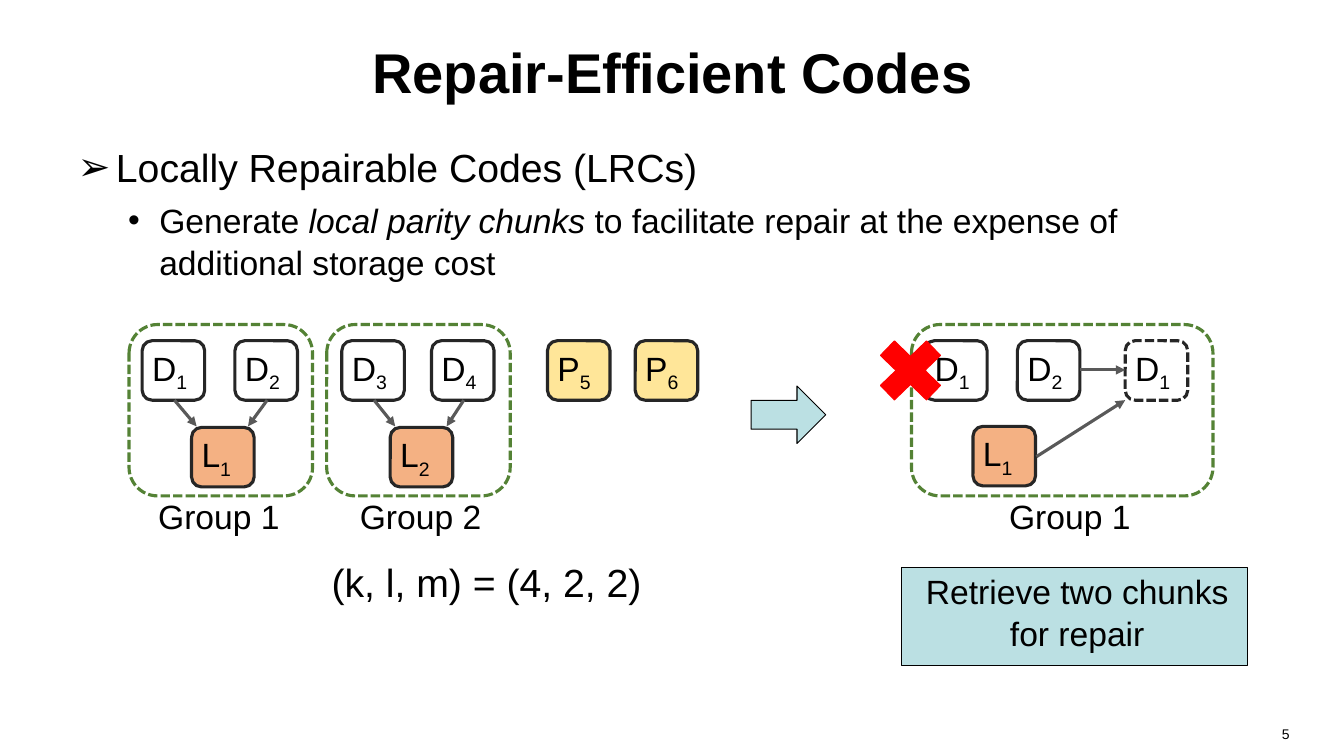
from dataclasses import dataclass

from lxml.etree import SubElement
from pptx import Presentation
from pptx.dml.color import RGBColor
from pptx.enum.dml import MSO_LINE
from pptx.enum.shapes import MSO_CONNECTOR, MSO_SHAPE
from pptx.enum.text import MSO_ANCHOR, MSO_AUTO_SIZE, PP_ALIGN
from pptx.oxml.ns import qn
from pptx.util import Emu, Pt

PX = 9144  # EMU per px, 100 px to the inch


@dataclass(frozen=True)
class Theme:
    font: str = "Arial"
    ink: str = "000000"
    outline: str = "262626"
    arrow: str = "595959"
    group: str = "548235"
    parity: str = "FFE699"
    local: str = "F4B183"
    accent: str = "BBE0E3"
    failure: str = "FF0000"
    title: int = 40
    large: int = 28
    text: int = 24
    small: int = 10
    thick: float = 2.25
    thin: float = 0.75


THEME = Theme()
CHUNK_W, CHUNK_H = 62, 59
DATA_Y, LOCAL_Y = 338, 424
GROUP_Y, GROUP_H = 322, 170


def px(*lengths):
    return [Emu(length * PX) for length in lengths]


def write(paragraph, text, size=THEME.text, bold=False, italic=False,
          align=None, baseline=0):
    """Append one formatted run to a paragraph."""
    run = paragraph.add_run()
    run.text = text
    font = run.font
    font.name, font.size = THEME.font, Pt(size)
    font.bold, font.italic = bold, italic
    font.color.rgb = RGBColor.from_string(THEME.ink)
    if baseline:
        run._r.get_or_add_rPr().set("baseline", str(baseline * 1000))
    if align is not None:
        paragraph.alignment = align


def set_frame(frame, margins=(10, 5, 10, 5), anchor=MSO_ANCHOR.TOP, wrap=True):
    frame.margin_left, frame.margin_top, frame.margin_right, frame.margin_bottom = px(*margins)
    frame.vertical_anchor = anchor
    frame.word_wrap = wrap
    frame.auto_size = MSO_AUTO_SIZE.NONE


def place(placeholder, left, top, width, height):
    placeholder.left, placeholder.top, placeholder.width, placeholder.height = px(
        left, top, width, height)


def add_block(slide, kind, box, fill=None, line=THEME.outline,
              weight=THEME.thick, dashed=False):
    block = slide.shapes.add_shape(kind, *px(*box))
    block.shadow.inherit = False
    if fill:
        block.fill.solid()
        block.fill.fore_color.rgb = RGBColor.from_string(fill)
    else:
        block.fill.background()
    block.line.color.rgb = RGBColor.from_string(line)
    block.line.width = Pt(weight)
    if dashed:
        block.line.dash_style = MSO_LINE.SQUARE_DOT
    return block


def add_chunk(slide, letter, index, left, top, fill=None, dashed=False):
    chunk = add_block(slide, MSO_SHAPE.ROUNDED_RECTANGLE,
                      (left, top, CHUNK_W, CHUNK_H), fill, dashed=dashed)
    set_frame(chunk.text_frame, margins=(7, 4, 0, 0))
    name = chunk.text_frame.paragraphs[0]
    write(name, letter, align=PP_ALIGN.LEFT)
    write(name, index, baseline=-25)


def add_label(slide, text, box, size=THEME.text, align=PP_ALIGN.LEFT, wrap=False):
    label = slide.shapes.add_textbox(*px(*box))
    set_frame(label.text_frame, wrap=wrap)
    write(label.text_frame.paragraphs[0], text, size=size, align=align)


def add_group(slide, name, left, width, label_left):
    add_block(slide, MSO_SHAPE.ROUNDED_RECTANGLE, (left, GROUP_Y, width, GROUP_H),
              line=THEME.group, dashed=True)
    add_label(slide, name, (label_left, 487, 142, 50))


def add_arrow(slide, *ends):
    arrow = slide.shapes.add_connector(MSO_CONNECTOR.STRAIGHT, *px(*ends))
    arrow.line.color.rgb = RGBColor.from_string(THEME.arrow)
    arrow.line.width = Pt(THEME.thick)
    SubElement(arrow.line._get_or_add_ln(), qn("a:tailEnd"), type="triangle")
    SubElement(arrow._element.spPr, qn("a:effectLst"))


def set_bullet(paragraph, mark, margin, hanging):
    properties = paragraph._p.get_or_add_pPr()
    properties.set("marL", str(margin * PX))
    properties.set("indent", str(-hanging * PX))
    SubElement(properties, qn("a:buFont"), typeface=THEME.font)
    SubElement(properties, qn("a:buChar"), char=mark)


def add_heading(slide):
    heading = slide.shapes.title
    place(heading, 67, 8, 1200, 125)
    set_frame(heading.text_frame, anchor=MSO_ANCHOR.MIDDLE)
    write(heading.text_frame.paragraphs[0], "Repair-Efficient Codes",
          size=THEME.title, bold=True, align=PP_ALIGN.CENTER)


def add_points(slide):
    points = slide.placeholders[1]
    place(points, 67, 142, 1200, 612)
    set_frame(points.text_frame)

    codes = points.text_frame.paragraphs[0]
    codes.line_spacing, codes.space_before = 0.9, Pt(0)
    set_bullet(codes, "➢", 38, 38)
    write(codes, "Locally Repairable Codes (LRCs)", size=THEME.large)

    parity = points.text_frame.add_paragraph()
    parity.level = 1
    parity.line_spacing, parity.space_before = 1.05, Pt(5)
    set_bullet(parity, "•", 81, 31)
    write(parity, "Generate ")
    write(parity, "local parity chunks ", italic=True)
    write(parity, "to facilitate repair at the expense of additional storage cost")


def add_encoding(slide):
    # Local groups: two data chunks feed one local parity chunk
    groups = [(1, 128, 147, (141, 233), 190), (2, 324, 347, (339, 428), 387)]
    for number, left, label_left, data_lefts, local_left in groups:
        add_group(slide, f"Group {number}", left, 182, label_left)
        for offset, data_left in enumerate(data_lefts):
            add_chunk(slide, "D", str(2 * number - 1 + offset), data_left, DATA_Y)
            tip = local_left + (5, 56)[offset]
            add_arrow(slide, data_left + 32, DATA_Y + CHUNK_H, tip, LOCAL_Y - 1)
        add_chunk(slide, "L", str(number), local_left, LOCAL_Y, THEME.local)

    # Global parity chunks
    for index, left in (("5", 543), ("6", 630)):
        add_chunk(slide, "P", index, left, DATA_Y, THEME.parity)
    add_label(slide, "(k, l, m) = (4, 2, 2)", (319, 549, 331, 57), size=THEME.large)


def add_repair(slide):
    add_block(slide, MSO_SHAPE.RIGHT_ARROW, (745, 383, 74, 57), THEME.accent,
              THEME.ink, THEME.thin)

    # Failed chunk, surviving chunks and the rebuilt chunk
    add_group(slide, "Group 1", 904, 299, 991)
    add_chunk(slide, "D", "1", 917, DATA_Y)
    add_chunk(slide, "D", "2", 1009, DATA_Y)
    add_chunk(slide, "L", "1", 965, LOCAL_Y - 1, THEME.local)
    add_block(slide, MSO_SHAPE.MATH_MULTIPLY, (859, 325, 88, 85), THEME.failure,
              THEME.failure, THEME.thin)
    add_chunk(slide, "D", "1", 1116, DATA_Y, dashed=True)
    add_arrow(slide, 1071, 367, 1116, 367)
    add_arrow(slide, 1028, 453, 1116, 397)

    # Repair cost
    cost = add_block(slide, MSO_SHAPE.RECTANGLE, (894, 563, 343, 97), THEME.accent,
                     THEME.ink, THEME.thin)
    set_frame(cost.text_frame, margins=(10, 3, 4, 0))
    write(cost.text_frame.paragraphs[0], "Retrieve two chunks", align=PP_ALIGN.CENTER)
    second = cost.text_frame.add_paragraph()
    second.line_spacing = 1.05
    write(second, "for repair", align=PP_ALIGN.CENTER)


def main():
    deck = Presentation()
    deck.slide_width, deck.slide_height = px(1333, 750)
    slide = deck.slides.add_slide(deck.slide_layouts[1])
    add_heading(slide)
    add_points(slide)
    add_encoding(slide)
    add_repair(slide)
    # Slide number
    add_label(slide, "5", (978, 715, 311, 35), size=THEME.small,
              align=PP_ALIGN.RIGHT, wrap=True)
    deck.save("out.pptx")


if __name__ == "__main__":
    main()
